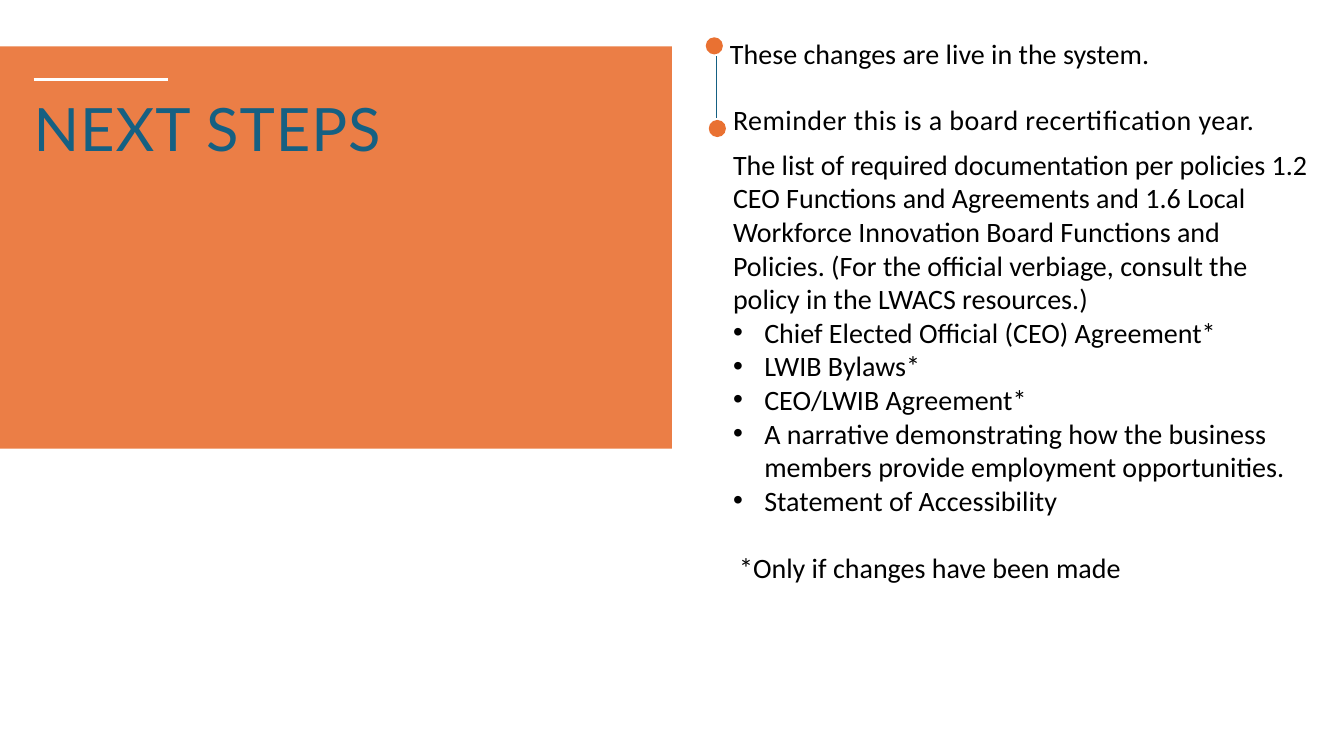
from lxml import etree
from pptx import Presentation
from pptx.dml.color import RGBColor
from pptx.enum.shapes import MSO_CONNECTOR, MSO_SHAPE
from pptx.enum.text import MSO_ANCHOR, MSO_AUTO_SIZE, PP_ALIGN
from pptx.oxml.ns import qn
from pptx.util import Inches, Pt

LINE = MSO_CONNECTOR.STRAIGHT
RECT, OVAL = MSO_SHAPE.RECTANGLE, MSO_SHAPE.OVAL
TOP, LEFT, FIXED = MSO_ANCHOR.TOP, PP_ALIGN.LEFT, MSO_AUTO_SIZE.NONE
ORANGE, BLUE, WHITE, BLACK = "E97132", "156082", "FFFFFF", "000000"
WIDE, HIGH = 13.33, 7.5

INTRO = ("The list of required documentation per policies 1.2 CEO Functions and "
         "Agreements and 1.6 Local Workforce Innovation Board Functions and Policies. "
         "(For the official verbiage, consult the policy in the LWACS resources.)")
PAPERS = [
    "Chief Elected Official (CEO) Agreement*",
    "LWIB Bylaws*",
    "CEO/LWIB Agreement*",
    "A narrative demonstrating how the business members provide employment opportunities.",
    "Statement of Accessibility",
]
NOTE = "*Only if changes have been made"


def tint(code):
    return RGBColor.from_string(code)


def place(shape, x, y, w, h):
    shape.left, shape.top = Inches(x), Inches(y)
    shape.width, shape.height = Inches(w), Inches(h)


def style(para, size, font, color, gap=0):
    para.alignment = LEFT
    para.space_before = para.space_after = Pt(0)
    for run in para.runs:
        run.font.size, run.font.name = Pt(size), font
        run.font.color.rgb = tint(color)
        if gap:
            run.font._element.set("spc", str(round(gap * 100)))


def frame(shape, side=0, edge=0):
    text = shape.text_frame
    text.word_wrap, text.auto_size = True, FIXED
    text.vertical_anchor = TOP
    text.margin_left = text.margin_right = Inches(side)
    text.margin_top = text.margin_bottom = Inches(edge)
    return text


def solid(slide, kind, x, y, w, h, color):
    shape = slide.shapes.add_shape(kind, Inches(x), Inches(y), Inches(w), Inches(h))
    shape.shadow.inherit = False
    shape.fill.solid()
    shape.fill.fore_color.rgb = tint(color)
    shape.line.fill.background()
    return shape


def rule(slide, x1, y1, x2, y2, color, width):
    line = slide.shapes.add_connector(LINE, Inches(x1), Inches(y1), Inches(x2), Inches(y2))
    line.line.color.rgb, line.line.width = tint(color), Pt(width)
    etree.SubElement(line.element.spPr, qn("a:effectLst"))


def bullet(para, mark, left, hang=0):
    props = para._p.get_or_add_pPr()
    props.set("marL", str(Inches(left)))
    props.set("indent", str(Inches(-hang)))
    if mark:
        etree.SubElement(props, qn("a:buFont"), typeface="Arial")
        etree.SubElement(props, qn("a:buChar"), char=mark)
    else:
        etree.SubElement(props, qn("a:buNone"))


def banner(slide, x, y, w, h):
    title = slide.shapes.title
    panel = solid(slide, RECT, x, y, w, h, ORANGE)
    color = panel.element.spPr.find(".//" + qn("a:srgbClr"))
    etree.SubElement(color, qn("a:alpha"), val="90000")
    title.element.addprevious(panel.element)
    inset = w * 0.05
    rule(slide, x + inset, y + 0.33, x + w * 0.25, y + 0.33, WHITE, 2.25)
    place(title, x + inset, y + 0.5, 4.88, 1.08)
    para = frame(title).paragraphs[0]
    para.text = "NEXT STEPS"
    style(para, 42.7, "Lato", BLUE, 0.7)
    para.line_spacing = Pt(48)


def news(slide, x, y, w, h):
    dot = 0.17
    rows = [
        ("These changes are live in the system.", 0, 0.24, -0.01, 0),
        ("Reminder this is a board recertification year.", 0.03, 0.27, -0.17, 0.3),
    ]
    for row, (words, shift, inset, rise, gap) in enumerate(rows):
        top = y + row * h
        solid(slide, OVAL, x + shift, top, dot, dot, ORANGE)
        box = slide.shapes.add_textbox(
            Inches(x + inset), Inches(top + rise), Inches(w - inset), Inches(0.34))
        para = frame(box).paragraphs[0]
        para.text = words
        style(para, 20, "Calibri", BLACK, gap)
    rule(slide, x + 0.11, y + dot + 0.02, x + 0.11, y + h - 0.02, BLUE, 0.75)


def papers(slide, x, y, w, h):
    body = slide.placeholders[1]
    place(body, x, y, w, h)
    text = frame(body, 0.1, 0.05)
    text.text = "\n".join([INTRO, *PAPERS, NOTE])
    for para in text.paragraphs:
        style(para, 20, "Calibri", BLACK)
    first, *items, last = text.paragraphs
    bullet(first, None, 0)
    for item in items:
        bullet(item, "•", 0.31, 0.31)
    last.space_before = Pt(24)
    bullet(last, None, 0.06)


def main():
    deck = Presentation()
    deck.slide_width, deck.slide_height = Inches(WIDE), Inches(HIGH)
    slide = deck.slides.add_slide(deck.slide_layouts[1])
    banner(slide, 0, 0.46, WIDE / 2, 3.99)
    news(slide, 7, 0.37, 6.18, 0.82)
    papers(slide, 7.17, 1.41, 5.97, 4.48)
    deck.save("out.pptx")


if __name__ == "__main__":
    main()
